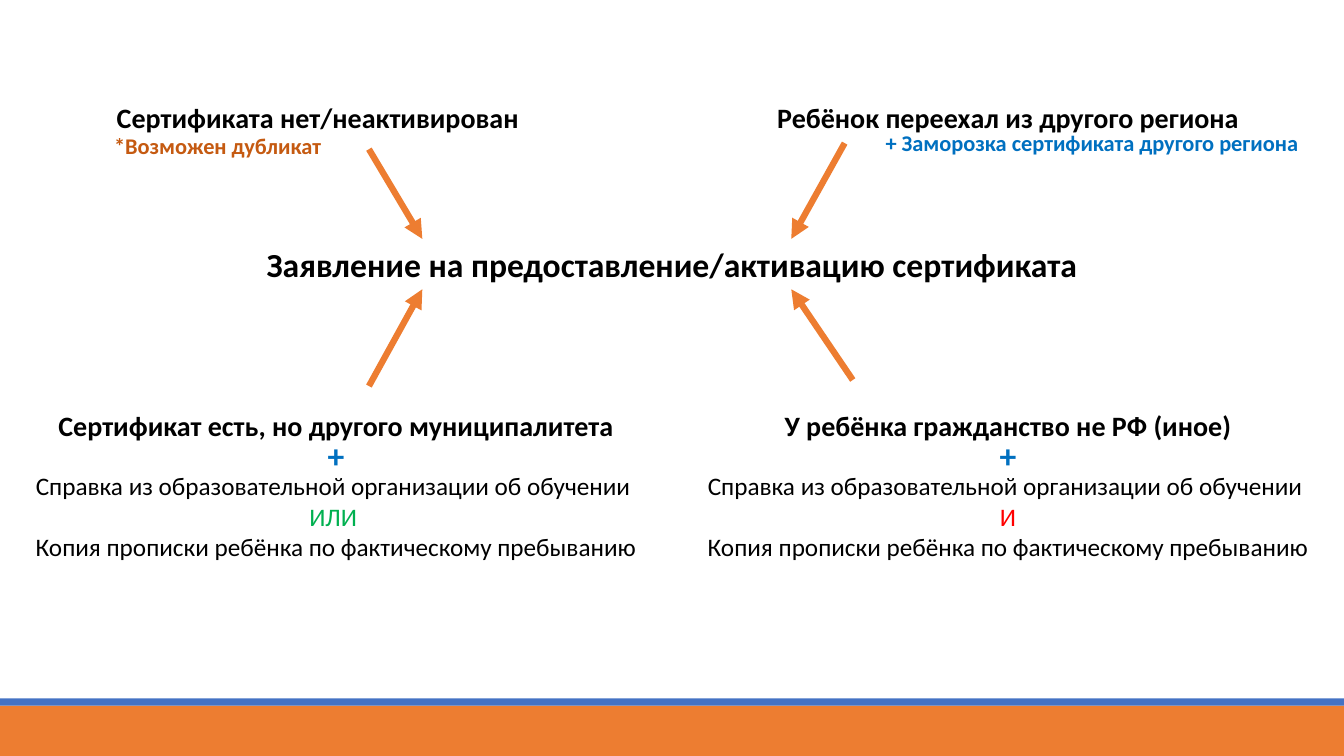
import pptx
import pptx.util
import pptx.dml.color
import pptx.enum.shapes
import pptx.enum.text
import pptx.oxml.ns
import lxml.etree

THEME = {
    "font": "Calibri",
    "black": "000000",
    "orange": "ED7D31",
    "blue": "4472C4",
    "accent": "0070C0",
    "brown": "C55A11",
    "green": "00B050",
    "red": "FF0000",
    "title": 24,
    "heading": 20,
    "body": 18,
    "note": 16,
    "arrow": 4.5,
}

presentation = pptx.Presentation()
presentation.slide_width = pptx.util.Inches(13.33)
presentation.slide_height = pptx.util.Inches(7.5)
slide = presentation.slides.add_slide(presentation.slide_layouts[6])

COLUMNS, ROWS = 40, 15
HALF = COLUMNS / 2
column = presentation.slide_width / COLUMNS
row = presentation.slide_height / ROWS


def place(left, top, width, height):
    return [round(left * column), round(top * row), round(width * column), round(height * row)]


def color(name):
    return pptx.dml.color.RGBColor.from_string(THEME[name])


for top, height, fill in [(14, 1, "orange"), (13.86, 0.14, "blue")]:
    bar = slide.shapes.add_shape(
        pptx.enum.shapes.MSO_SHAPE.RECTANGLE, *place(0, top, COLUMNS, height))
    bar.shadow.inherit = False
    bar.fill.solid()
    bar.fill.fore_color.rgb = color(fill)
    bar.line.fill.background()

texts = [
    (0, 4.74, COLUMNS, 1, "title", True,
     [("Заявление на предоставление/активацию сертификата", "black")]),
    (-0.54, 1.9, HALF, 0.88, "heading", True, [("Сертификата нет/неактивирован", "black")]),
    (HALF, 1.9, HALF, 0.88, "heading", True, [("Ребёнок переехал из другого региона", "black")]),
    (22.5, 2.46, HALF, 0.74, "note", True,
     [("+ Заморозка сертификата другого региона", "accent")]),
    (-4.56, 2.52, 22.08, 0.74, "note", True, [("*Возможен дубликат", "brown")]),
]
cases = [
    ("Сертификат есть, но другого муниципалитета", "ИЛИ ", "green"),
    ("У ребёнка гражданство не РФ (иное)", "И", "red"),
]
for index, (heading, conjunction, conjunction_color) in enumerate(cases):
    left = index * HALF
    texts += [
        (left, 8, HALF, 0.88, "heading", True, [(heading, "black")]),
        (left, 8.54, HALF, 1, "title", True, [("+", "accent")]),
        (left, 9.24, HALF, 2.02, "body", False, [
            ("Справка из образовательной организации об обучении ", "black"),
            (conjunction, conjunction_color),
            ("Копия прописки ребёнка по фактическому пребыванию", "black"),
        ]),
    ]

for left, top, width, height, size, bold, lines in texts:
    frame = slide.shapes.add_textbox(*place(left, top, width, height)).text_frame
    frame.word_wrap = True
    frame.auto_size = pptx.enum.text.MSO_AUTO_SIZE.SHAPE_TO_FIT_TEXT
    for index, (text, text_color) in enumerate(lines):
        paragraph = frame.add_paragraph() if index else frame.paragraphs[0]
        paragraph.alignment = pptx.enum.text.PP_ALIGN.CENTER
        run = paragraph.add_run()
        run.text = text
        font_format = {"name": THEME["font"], "size": pptx.util.Pt(THEME[size]), "bold": bold}
        for attribute, value in font_format.items():
            setattr(run.font, attribute, value)
        run.font.color.rgb = color(text_color)

arrows = [
    (10.98, 2.96, 12.57, 4.74),
    (25.14, 2.84, 23.55, 4.74),
    (10.98, 7.66, 12.57, 5.74),
    (25.38, 7.54, 23.55, 5.74),
]
for ends in arrows:
    arrow = slide.shapes.add_connector(
        pptx.enum.shapes.MSO_CONNECTOR.STRAIGHT, *place(*ends))
    arrow.line.color.rgb = color("orange")
    arrow.line.width = pptx.util.Pt(THEME["arrow"])
    outline = arrow.line._get_or_add_ln()
    lxml.etree.SubElement(outline, pptx.oxml.ns.qn("a:tailEnd"), type="triangle")
    lxml.etree.SubElement(outline.getparent(), pptx.oxml.ns.qn("a:effectLst"))

presentation.save("out.pptx")
